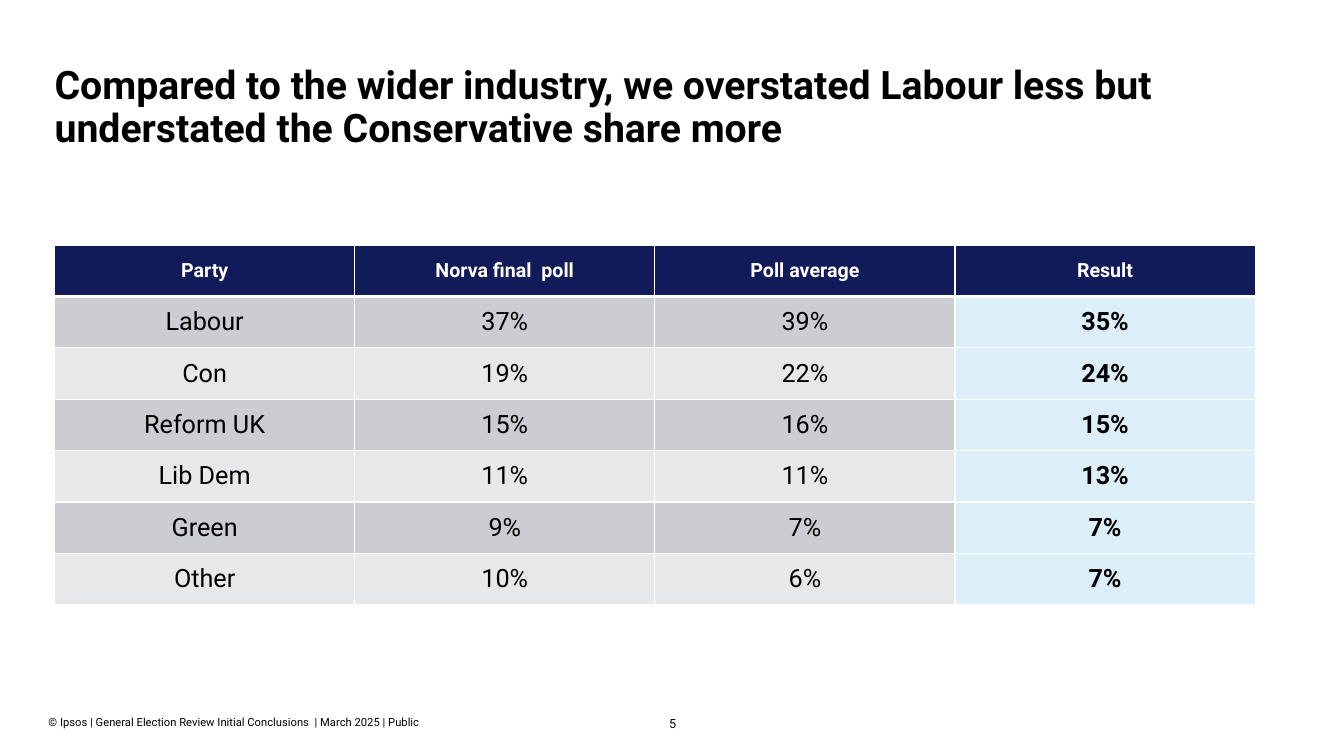
from lxml.etree import SubElement
from pptx import Presentation
from pptx.dml.color import RGBColor
from pptx.enum.text import MSO_ANCHOR as Anchor, MSO_AUTO_SIZE as AutoSize, PP_ALIGN as Align
from pptx.oxml.ns import qn
from pptx.util import Pt

COLORS = {
    "text": "000000",
    "white": "FFFFFF",
    "header": "121B5A",
    "odd_row": "CCCDD2",
    "even_row": "E7E8EA",
    "result": "DCEFF8",
}


def write(frame, text, color, font_format, paragraph_format, frame_format):
    frame.text = text
    paragraph = frame.paragraphs[0]
    font = paragraph.runs[0].font
    font.color.rgb = RGBColor.from_string(COLORS[color])
    for target, values in (
        (font, {"name": "Roboto", **font_format}),
        (paragraph, paragraph_format),
        (frame, frame_format),
    ):
        for attribute, value in values.items():
            setattr(target, attribute, value)


def add_border(cell, side, width):
    line = SubElement(cell._tc.get_or_add_tcPr(), qn(f"a:{side}"), w=str(Pt(width)))
    fill = SubElement(line, qn("a:solidFill"))
    SubElement(fill, qn("a:srgbClr"), val=COLORS["white"])


deck = Presentation()
deck.slide_width, deck.slide_height = Pt(960), Pt(540)
slide = deck.slides.add_slide(deck.slide_layouts[5])

no_margins = {
    "margin_left": 0,
    "margin_top": 0,
    "margin_right": 0,
    "margin_bottom": 0,
    "word_wrap": True,
    "auto_size": AutoSize.NONE,
}

headline = slide.shapes.title
headline.left, headline.top, headline.width, headline.height = Pt(39), Pt(47), Pt(912), Pt(88)
write(
    headline.text_frame,
    "Compared to the wider industry, we overstated Labour less but "
    "understated the Conservative share more",
    "text",
    {"size": Pt(28), "bold": True},
    {"alignment": Align.LEFT, "line_spacing": 0.9},
    {**no_margins, "vertical_anchor": Anchor.TOP},
)

poll_rows = [
    ("Party", "Norva final  poll", "Poll average", "Result"),
    ("Labour", "37%", "39%", "35%"),
    ("Con", "19%", "22%", "24%"),
    ("Reform UK", "15%", "16%", "15%"),
    ("Lib Dem", "11%", "11%", "13%"),
    ("Green", "9%", "7%", "7%"),
    ("Other", "10%", "6%", "7%"),
]
result_column = len(poll_rows[0]) - 1
polls = slide.shapes.add_table(
    len(poll_rows), len(poll_rows[0]), Pt(39), Pt(175), Pt(857.6), Pt(257.04)
).table

for row, values in enumerate(poll_rows):
    is_header = row == 0
    for column, value in enumerate(values):
        is_result = column == result_column
        if is_header:
            background = "header"
        elif is_result:
            background = "result"
        else:
            background = "odd_row" if row % 2 else "even_row"
        cell = polls.cell(row, column)
        borders = {"lnL": 1, "lnR": 1, "lnT": 3 if row == 1 else 1, "lnB": 3 if is_header else 1}
        for side, width in borders.items():
            add_border(cell, side, width)
        cell.fill.solid()
        cell.fill.fore_color.rgb = RGBColor.from_string(COLORS[background])
        cell.vertical_anchor = Anchor.MIDDLE
        write(
            cell.text_frame,
            value,
            "white" if is_header else "text",
            {"size": Pt(14 if is_header else 18), "bold": is_header or is_result},
            {"alignment": Align.CENTER},
            {},
        )

copyright_line = slide.shapes.add_textbox(Pt(34.6), Pt(511), Pt(368), Pt(9.6))
write(
    copyright_line.text_frame,
    "© Ipsos | General Election Review Initial Conclusions  | March 2025 | Public",
    "text",
    {"size": Pt(8)},
    {"alignment": Align.LEFT},
    {**no_margins, "vertical_anchor": Anchor.BOTTOM},
)

page_number = slide.shapes.add_textbox(Pt(461), Pt(510.5), Pt(39), Pt(11))
write(
    page_number.text_frame,
    "5",
    "text",
    {"size": Pt(9)},
    {"alignment": Align.CENTER, "line_spacing": 1.1},
    {**no_margins, "vertical_anchor": Anchor.TOP},
)

deck.save("out.pptx")
